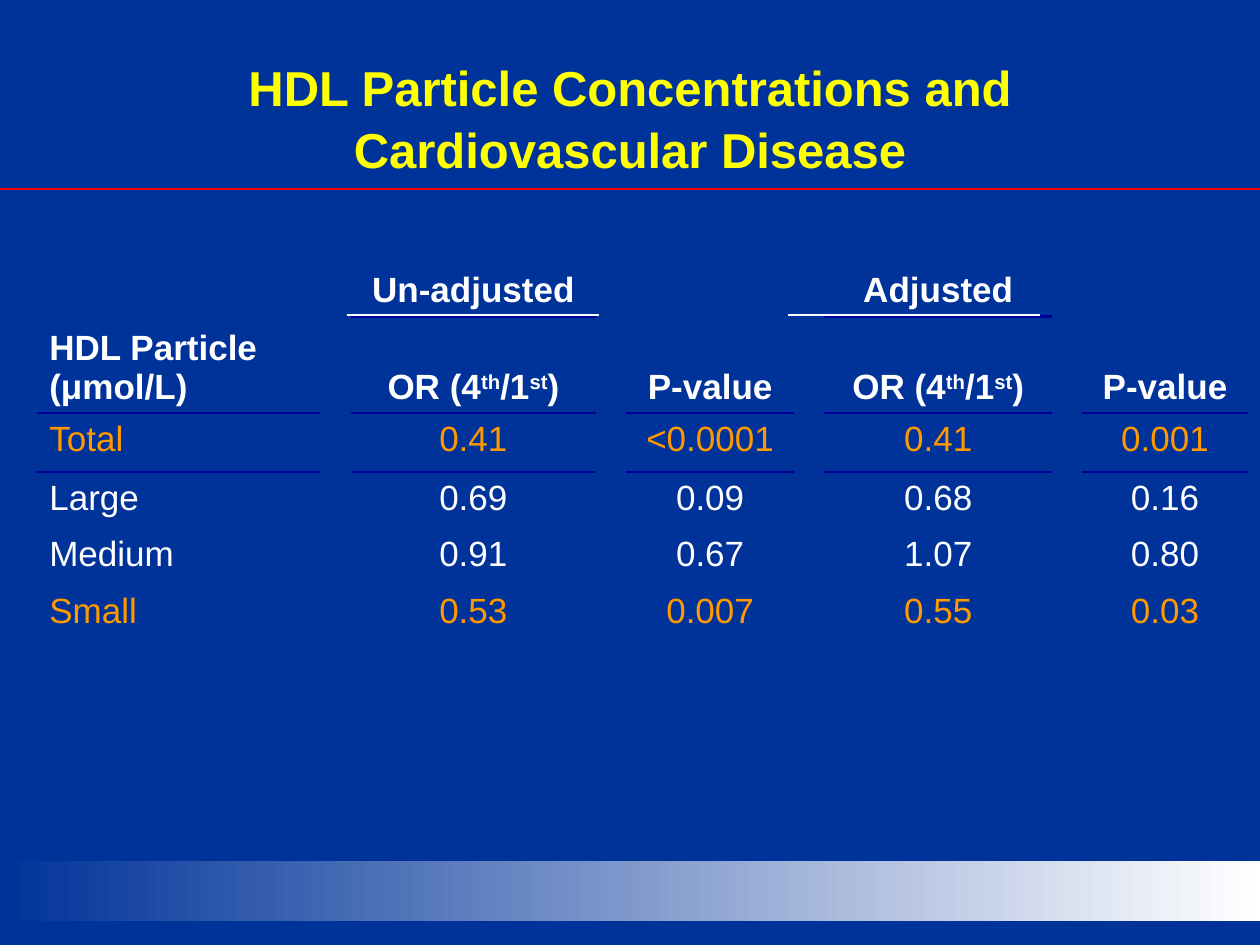
"""Build the slide on HDL particle concentrations and cardiovascular disease."""
from lxml.etree import SubElement
from pptx import Presentation
from pptx.dml.color import RGBColor
from pptx.enum.shapes import MSO_CONNECTOR as Connector, MSO_SHAPE as Shape
from pptx.enum.text import MSO_ANCHOR as Anchor, PP_ALIGN as Align
from pptx.oxml import parse_xml
from pptx.oxml.ns import nsdecls, qn
from pptx.util import Cm, Pt

COLORS = {
    "background": "003399",
    "title": "FFFF00",
    "text": "FFFFFF",
    "significant": "FF9900",
    "border": "000099",
    "rule": "FF0000",
}
FONT = "Arial"
NO_STYLE = "{2D5ABB26-0587-4C30-8999-92F81FD0307C}"
GAP = 0.58
COLUMN_WIDTHS = [5.72, GAP, 4.95, GAP, 3.38, GAP, 4.6, GAP, 3.33]
ROW_HEIGHTS = [1.07, 1.65, 1.19, 1.14, 1.14, 2.57]
ODDS_RATIO = "OR (4^th^/1^st^)"
ROWS = [
    ["", "Un-adjusted", "", "Adjusted", ""],
    ["HDL Particle (μmol/L)", ODDS_RATIO, "P-value", ODDS_RATIO, "P-value"],
    ["Total", "0.41", "<0.0001", "0.41", "0.001"],
    ["Large", "0.69", "0.09", "0.68", "0.16"],
    ["Medium", "0.91", "0.67", "1.07", "0.80"],
    ["Small", "0.53", "0.007", "0.55", "0.03"],
]
HEADER_ROWS = 2
SIGNIFICANT_ROWS = ("Total", "Small")


def color(name):
    return RGBColor.from_string(COLORS[name])


def style_paragraph(para, size, color_name, bold, align):
    para.alignment = align
    font = para.font
    font.name, font.size, font.bold = FONT, Pt(size), bold
    font.color.rgb = color(color_name)


def add_gradient_band(page):
    band = page.shapes.add_shape(
        Shape.RECTANGLE, Cm(0), Cm(17.35), Cm(25.4), Cm(1.22))
    band.shadow.inherit = False
    band.line.fill.background()
    band.fill.gradient()
    band.fill.gradient_angle = 0
    for stop, position, name in zip(
            band.fill.gradient_stops, (0, 1), ("background", "text")):
        stop.position = position
        stop.color.rgb = color(name)


def add_title(page, text):
    box = page.shapes.add_textbox(Cm(1.27), Cm(0.76), Cm(22.86), Cm(3.18))
    frame = box.text_frame
    frame.word_wrap = True
    frame.vertical_anchor = Anchor.MIDDLE
    para = frame.paragraphs[0]
    para.text = text
    para.line_spacing = 1.05
    style_paragraph(para, 28, "title", True, Align.CENTER)


def add_rule(page, left, top, length, color_name):
    rule = page.shapes.add_connector(
        Connector.STRAIGHT, Cm(left), Cm(top), Cm(left + length), Cm(top))
    rule.line.width = Pt(0.75)
    rule.line.color.rgb = color(color_name)
    SubElement(rule._element.spPr, qn("a:effectLst"))


def set_border(cell, side):
    cell._tc.get_or_add_tcPr().insert(0, parse_xml(
        f'<a:ln{side} {nsdecls("a")} w="{Pt(1.5)}"><a:solidFill>'
        f'<a:srgbClr val="{COLORS["border"]}"/></a:solidFill></a:ln{side}>'))


def write_cell(cell, text, color_name, bold, align):
    """Write text in a cell, raising the parts between carets."""
    para = cell.text_frame.paragraphs[0]
    for index, part in enumerate(text.split("^")):
        span = para.add_run()
        span.text = part
        if index % 2:
            span._r.get_or_add_rPr().set("baseline", "30000")
    style_paragraph(para, 20, color_name, bold, align)


def add_results_table(page):
    table = page.shapes.add_table(
        len(ROW_HEIGHTS), len(COLUMN_WIDTHS), Cm(0.74), Cm(5.28),
        Cm(sum(COLUMN_WIDTHS)), Cm(sum(ROW_HEIGHTS))).table
    table.first_row = table.horz_banding = False
    table._tbl.tblPr.find(qn("a:tableStyleId")).text = NO_STYLE
    for column, width in zip(table.columns, COLUMN_WIDTHS):
        column.width = Cm(width)
    for row, height in zip(table.rows, ROW_HEIGHTS):
        row.height = Cm(height)
    for cell in table.iter_cells():
        cell.fill.background()
    for row_index, values in enumerate(ROWS):
        header = row_index < HEADER_ROWS
        name = "significant" if values[0] in SIGNIFICANT_ROWS else "text"
        for index, value in enumerate(values):
            if not value:
                continue
            cell = table.cell(row_index, 2 * index)
            align = Align.CENTER if index else Align.LEFT
            write_cell(cell, value, name, header, align)
            if header:
                cell.vertical_anchor = Anchor.BOTTOM
                set_border(cell, "B")
                set_border(table.cell(row_index + 1, 2 * index), "T")


def main():
    deck = Presentation()
    deck.slide_width, deck.slide_height = Cm(25.4), Cm(19.05)
    page = deck.slides.add_slide(deck.slide_layouts[6])
    page.background.fill.solid()
    page.background.fill.fore_color.rgb = color("background")
    add_gradient_band(page)
    add_title(page, "HDL Particle Concentrations and Cardiovascular Disease")
    add_results_table(page)
    add_rule(page, 0, 3.81, 25.4, "rule")
    for left in (15.88, 6.99):
        add_rule(page, left, 6.35, 5.08, "text")
    deck.save("out.pptx")


if __name__ == "__main__":
    main()
